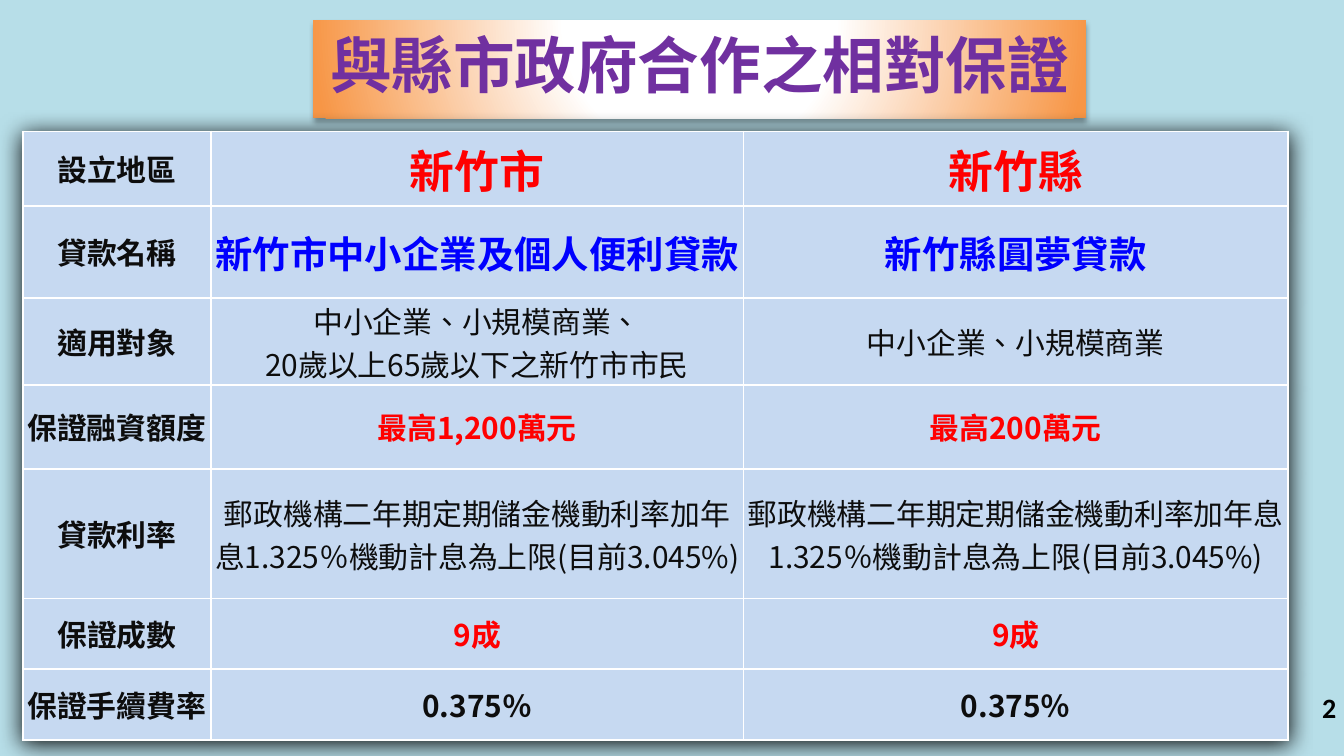
"""Build a slide comparing the relative guarantee loans of two local governments."""
from dataclasses import dataclass

from pptx import Presentation
from pptx.dml.color import RGBColor
from pptx.enum.text import MSO_ANCHOR as Anchor, MSO_AUTO_SIZE as AutoSize, PP_ALIGN as Align
from pptx.oxml import parse_xml
from pptx.oxml.ns import nsdecls
from pptx.util import Pt

COLOURS = {
    "background": "B7DEE8", "cell": "C6D9F1", "white": "FFFFFF", "black": "000000",
    "ink": "0D0D0D", "red": "FF0000", "blue": "0000FF", "purple": "7030A0", "orange": "F79646",
}
CJK_FONT = "Noto Sans CJK SC"
COLUMN_WIDTHS = (100.8, 285.3, 291.8)
RATE = "郵政機構二年期定期儲金機動利率加年息1.325％機動計息為上限(目前3.045%)"


@dataclass(frozen=True)
class Style:
    size: float
    colour: str = "ink"
    bold: bool = True
    font: str = CJK_FONT


@dataclass(frozen=True)
class LoanRow:
    height: float
    label: str
    city: str
    county: str
    style: Style


LABEL = Style(16)
PLAIN = Style(16, bold=False)
STRONG = Style(16, "red")
ROWS = (
    LoanRow(39.8, "設立地區", "新竹市", "新竹縣", Style(24, "red")),
    LoanRow(49.6, "貸款名稱", "新竹市中小企業及個人便利貸款", "新竹縣圓夢貸款", Style(20, "blue")),
    LoanRow(46.4, "適用對象", "中小企業、小規模商業、\n20歲以上65歲以下之新竹市市民", "中小企業、小規模商業", PLAIN),
    LoanRow(45, "保證融資額度", "最高1,200萬元", "最高200萬元", STRONG),
    LoanRow(69.6, "貸款利率", RATE, RATE, PLAIN),
    LoanRow(37.8, "保證成數", "9成", "9成", STRONG),
    LoanRow(37.8, "保證手續費率", "0.375％", "0.375％", LABEL),
)


def write(frame, text: str, style: Style, align: Align) -> None:
    """Fill a text frame with evenly styled paragraphs."""
    frame.text = text
    for para in frame.paragraphs:
        para.alignment = align
        for span in para.runs:
            font = span.font
            font.size, font.bold, font.name = Pt(style.size), style.bold, style.font
            font.color.rgb = RGBColor.from_string(COLOURS[style.colour])
            properties = span._r.get_or_add_rPr()
            properties.set("lang", "zh-TW")
            properties.append(parse_xml(f'<a:ea {nsdecls("a")} typeface="{style.font}"/>'))


def shadow(blur: float, distance: float, opacity: int):
    """Return an effect list with a black shadow cast downwards."""
    return parse_xml(
        f'<a:effectLst {nsdecls("a")}><a:outerShdw blurRad="{Pt(blur)}" dist="{Pt(distance)}" '
        f'dir="5400000" rotWithShape="0"><a:srgbClr val="{COLOURS["black"]}">'
        f'<a:alpha val="{opacity * 1000}"/></a:srgbClr></a:outerShdw></a:effectLst>')


def draw_title(slide) -> None:
    """Place the title on its glowing orange band."""
    title = slide.shapes.title
    title.left, title.top, title.width, title.height = Pt(167.8), Pt(10.8), Pt(414), Pt(52.6)
    frame = title.text_frame
    write(frame, "與縣市政府合作之相對保證", Style(33, "purple"), Align.CENTER)
    frame.word_wrap, frame.auto_size = True, AutoSize.NONE
    frame.vertical_anchor = Anchor.TOP
    stops = "".join(
        f'<a:gs pos="{position * 1000}"><a:srgbClr val="{COLOURS[name]}"/></a:gs>'
        for position, name in ((0, "white"), (35, "white"), (100, "orange")))
    properties = title._element.spPr
    properties.append(parse_xml(
        f'<a:gradFill {nsdecls("a")} rotWithShape="1"><a:gsLst>{stops}</a:gsLst><a:path path="circle">'
        '<a:fillToRect l="50000" t="-80000" r="50000" b="180000"/></a:path></a:gradFill>'))
    properties.append(shadow(3.1, 1.8, 35))


def draw_cell(cell, text: str, style: Style) -> None:
    """Format one table cell with white borders and centred text."""
    cell.margin_left = cell.margin_right = Pt(1.4)
    cell.margin_top = cell.margin_bottom = Pt(0)
    cell.vertical_anchor = Anchor.MIDDLE
    properties = cell._tc.get_or_add_tcPr()
    for side in "LRTB":
        properties.append(parse_xml(
            f'<a:ln{side} {nsdecls("a")} w="{Pt(1)}"><a:solidFill>'
            f'<a:srgbClr val="{COLOURS["white"]}"/></a:solidFill></a:ln{side}>'))
    cell.fill.solid()
    cell.fill.fore_color.rgb = RGBColor.from_string(COLOURS["cell"])
    write(cell.text_frame, text, style, Align.CENTER)
    if len(cell.text_frame.paragraphs) == 1:
        cell.text_frame.paragraphs[0].space_after = Pt(22.5)


def draw_table(slide) -> None:
    """Draw the loan comparison table."""
    frame = slide.shapes.add_table(
        len(ROWS), len(COLUMN_WIDTHS), Pt(12.2), Pt(70.4),
        Pt(sum(COLUMN_WIDTHS)), Pt(sum(row.height for row in ROWS)))
    table = frame.table
    table._tbl.tblPr.insert(0, shadow(12, 1.5, 95))
    for column, width in zip(table.columns, COLUMN_WIDTHS):
        column.width = Pt(width)
    for index, row in enumerate(ROWS):
        table.rows[index].height = Pt(row.height)
        draw_cell(table.cell(index, 0), row.label, LABEL)
        draw_cell(table.cell(index, 1), row.city, row.style)
        draw_cell(table.cell(index, 2), row.county, row.style)


def draw_page_number(slide) -> None:
    """Write the page number at the lower right."""
    box = slide.shapes.add_textbox(Pt(683.3), Pt(367.9), Pt(39.6), Pt(21.6))
    box.text_frame.word_wrap = True
    box.text_frame.vertical_anchor = Anchor.MIDDLE
    write(box.text_frame, "2", Style(15, "black", font="Calibri"), Align.RIGHT)


def main() -> None:
    """Assemble and save the deck."""
    deck = Presentation()
    deck.slide_width, deck.slide_height = Pt(720), Pt(405)
    page = deck.slides.add_slide(deck.slide_layouts[5])
    page.background.fill.solid()
    page.background.fill.fore_color.rgb = RGBColor.from_string(COLOURS["background"])
    draw_page_number(page)
    draw_table(page)
    draw_title(page)
    deck.save("out.pptx")


if __name__ == "__main__":
    main()
